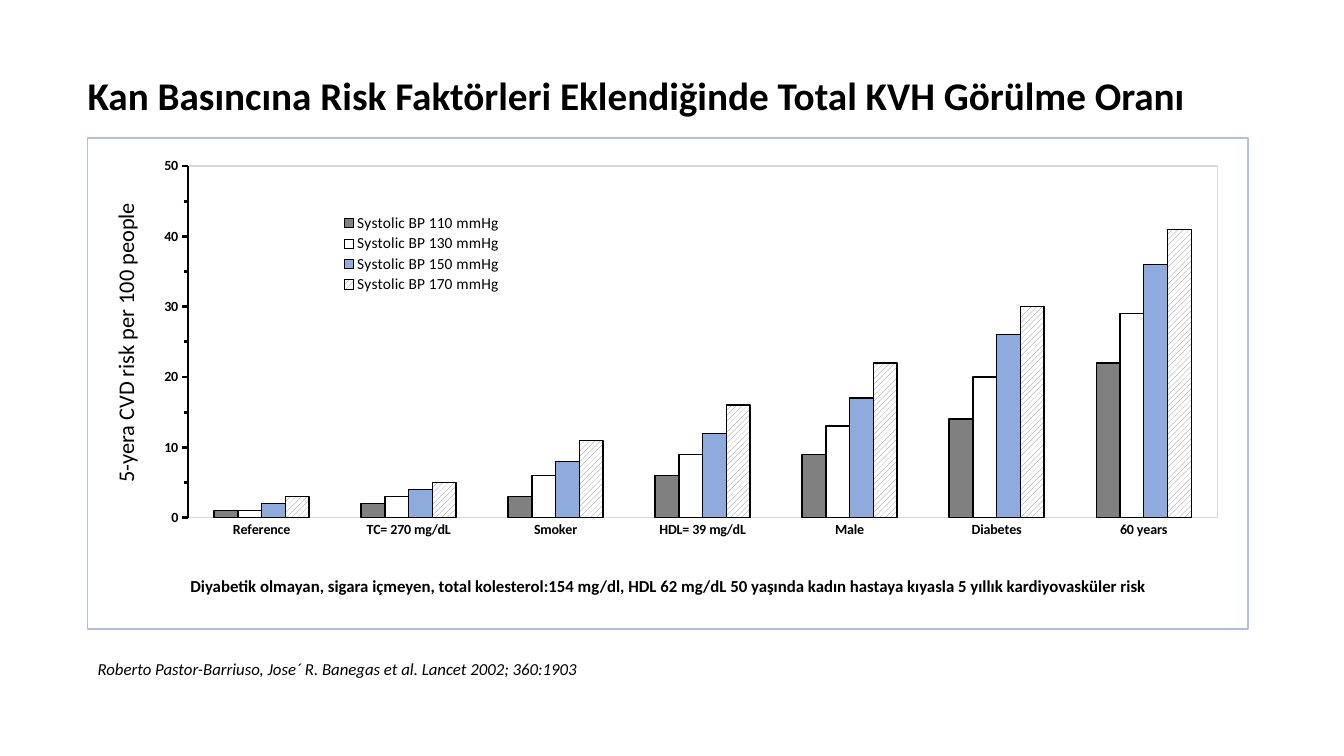
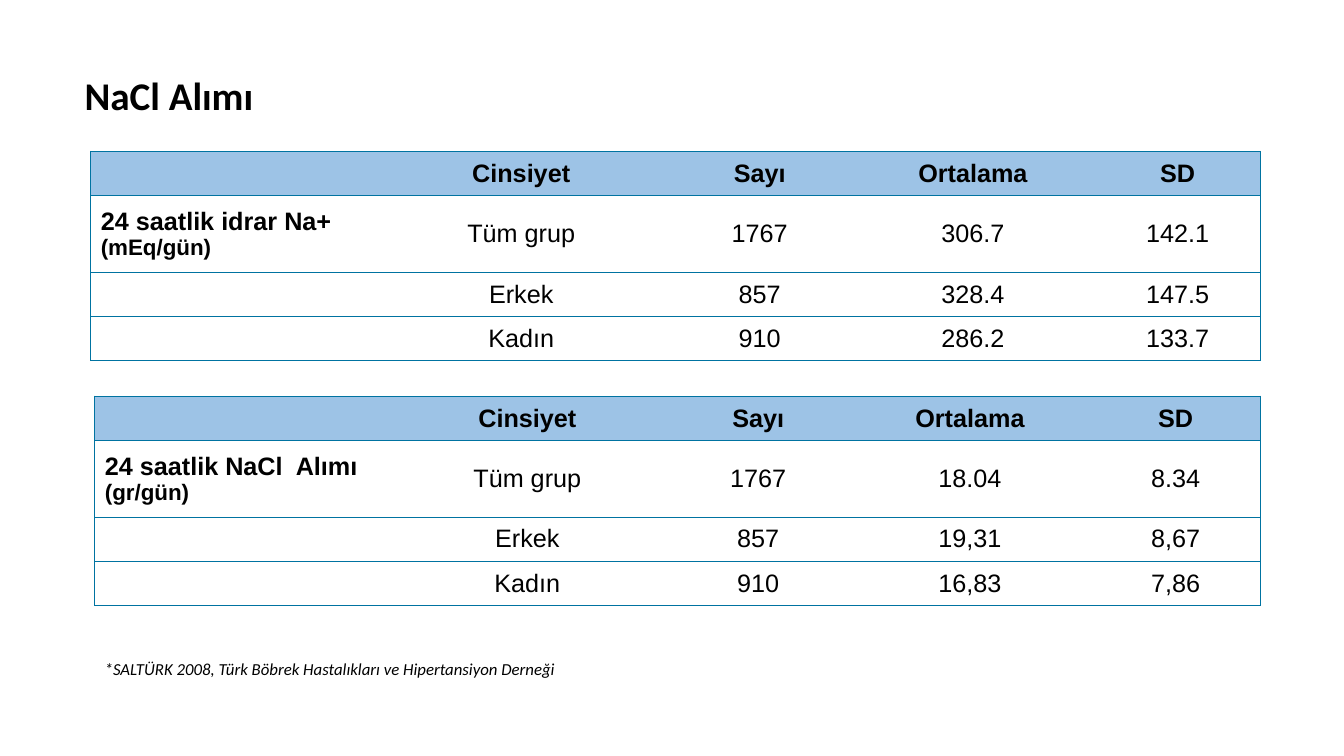
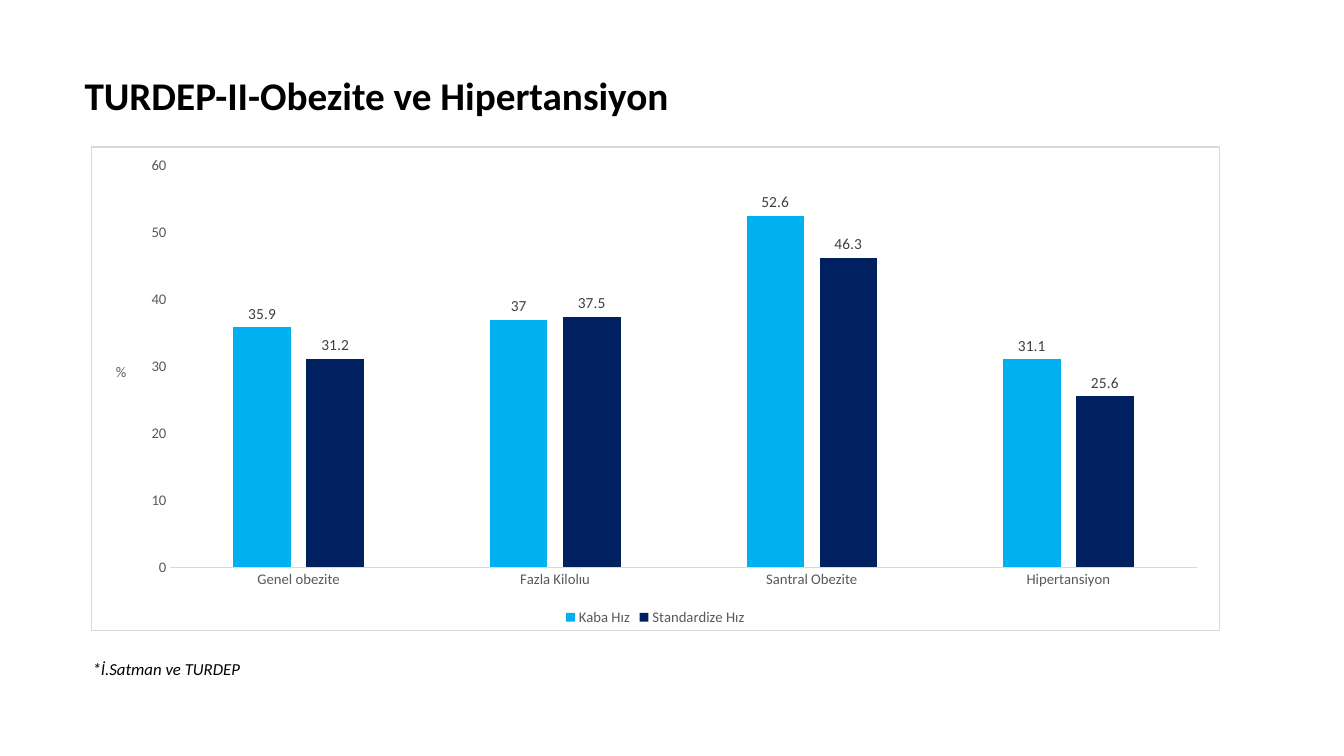
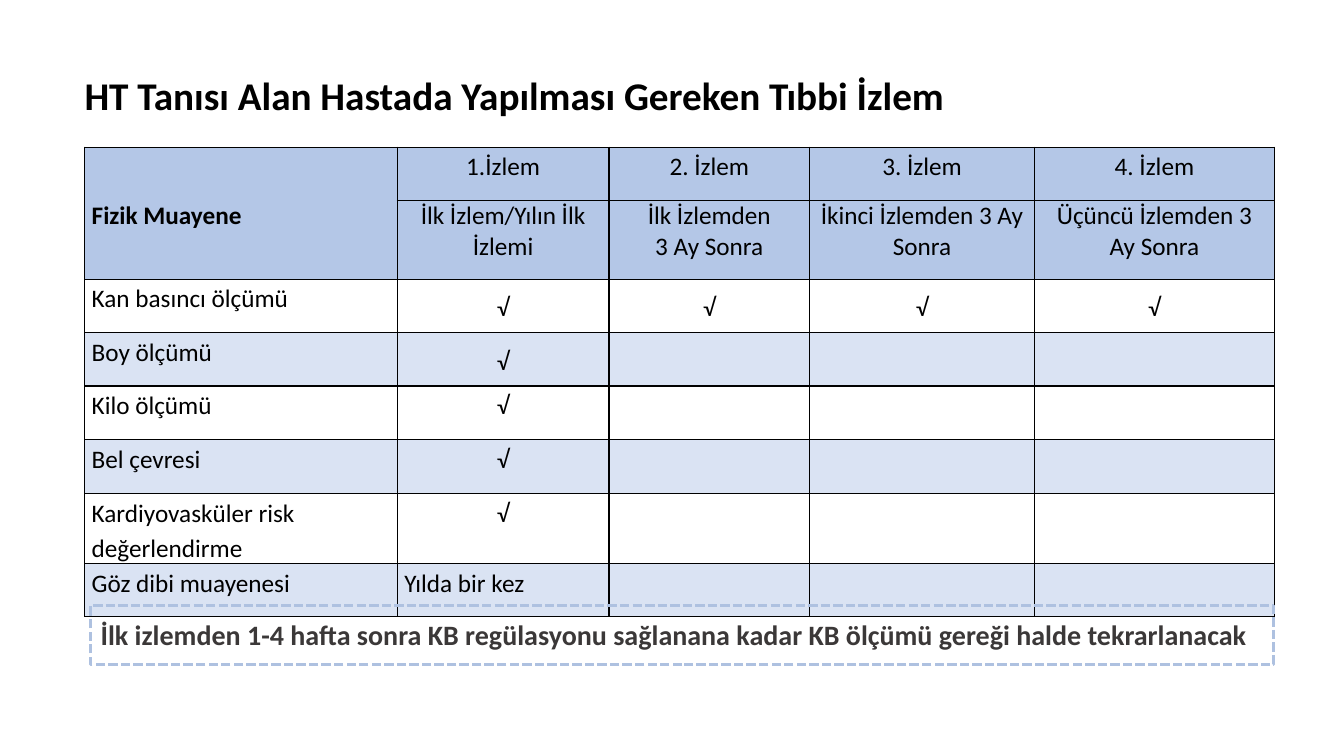
from pptx import Presentation
from pptx import util as u
from pptx.chart import data
from pptx.dml import color as dml
from pptx.enum import chart as ch, dml as line_kinds, shapes, text
from pptx.oxml import ns, parse_xml

PX = 9144  # 100 px to the inch
COLORS = {
    "black": "000000", "white": "FFFFFF", "dark": "3B3838",
    "label": "404040", "axis": "595959", "rule": "D9D9D9", "frame": "AEC1E0",
    "gray": "808080", "blue": "8FAADC", "sky": "00B0F0", "navy": "002060",
    "salt_head": "9DC3E6", "salt_line": "0073A1",
    "exam_head": "B4C7E7", "exam_band": "DAE3F3",
}
CENTER = text.PP_ALIGN.CENTER
TOP, MIDDLE = text.MSO_ANCHOR.TOP, text.MSO_ANCHOR.MIDDLE
TICK = ch.XL_TICK_MARK


def rgb(name):
    return dml.RGBColor.from_string(COLORS[name])


def assign(target, **fmt):
    for key, value in fmt.items():
        setattr(target, key, value)


def line_xml(tag, color, pt):
    """A line element of the given tag; without a colour it is not drawn."""
    paint = (f'<a:solidFill><a:srgbClr val="{COLORS[color]}"/></a:solidFill>'
             if color else "<a:noFill/>")
    return f'<a:{tag} {ns.nsdecls("a")} w="{u.Pt(pt)}">{paint}</a:{tag}>'


def frame_xml(color):
    """Shape properties of a chart part: white, with a thin outline or none."""
    return parse_xml(
        f'<c:spPr {ns.nsdecls("c", "a")}><a:solidFill><a:srgbClr val="FFFFFF"/>'
        f'</a:solidFill>{line_xml("ln", color, 1)}</c:spPr>')


def layout_xml(x, y, w, h, inner=False):
    target = '<c:layoutTarget val="inner"/>' if inner else ""
    sizes = "".join(f'<c:{k} val="{v}"/>' for k, v in zip("xywh", (x, y, w, h)))
    return parse_xml(
        f'<c:layout {ns.nsdecls("c")}><c:manualLayout>{target}'
        f'<c:xMode val="edge"/><c:yMode val="edge"/>{sizes}'
        '</c:manualLayout></c:layout>')


def set_layout(part, layout, after=None):
    """Replace the layout of a chart part, placing it after the named child."""
    for old in part.findall(ns.qn("c:layout")):
        part.remove(old)
    if after:
        part.find(ns.qn(after)).addnext(layout)
    else:
        part.insert(0, layout)


class Deck:
    def __init__(self):
        self.prs = Presentation()
        self.prs.slide_width, self.prs.slide_height = 1333 * PX, 750 * PX
        self.s = None

    def slide(self, title, x=74, w=1000):
        self.s = self.prs.slides.add_slide(self.prs.slide_layouts[6])
        self.text(title, x, 66, w, 57, size=28, bold=True)

    def font(self, font, size, color="black", name="Calibri", **fmt):
        assign(font, size=u.Pt(size), name=name, **fmt)
        font.color.rgb = rgb(color)

    def fill_text(self, tf, content, size, align=None, spacing=None, **fmt):
        """Set the lines of a string, or a tuple of (text, size) runs."""
        paragraphs = ([[(t, size)] for t in content.split("\n")]
                      if isinstance(content, str) else [content])
        for i, runs in enumerate(paragraphs):
            p = tf.add_paragraph() if i else tf.paragraphs[0]
            assign(p, alignment=align, line_spacing=spacing)
            for words, run_size in runs:
                if words:
                    r = p.add_run()
                    r.text = words
                    self.font(r.font, run_size, **fmt)

    def text(self, content, x, y, w, h, vert=None, **fmt):
        sp = self.s.shapes.add_textbox(*(v * PX for v in (x, y, w, h)))
        tf = sp.text_frame
        tf.word_wrap = True
        if vert:
            tf._txBody.bodyPr.set("vert", vert)
        self.fill_text(tf, content, **fmt)

    def source(self, content, x, w):
        self.text(content, x, 649, w, 30, size=12, italic=True)

    def box(self, x, y, w, h, fill=None, pt=1, dash=None):
        sp = self.s.shapes.add_shape(shapes.MSO_SHAPE.RECTANGLE,
                                     *(v * PX for v in (x, y, w, h)))
        sp.shadow.inherit = False
        if fill:
            sp.fill.solid()
            sp.fill.fore_color.rgb = rgb(fill)
        else:
            sp.fill.background()
        sp.line.color.rgb = rgb("frame")
        assign(sp.line, width=u.Pt(pt), dash_style=dash)
        return sp

    def table(self, x, y, cols, rows):
        frame = self.s.shapes.add_table(len(rows), len(cols), x * PX, y * PX,
                                        sum(cols) * PX, sum(rows) * PX)
        table = frame.table
        assign(table, first_row=False, horz_banding=False)
        for col, w in zip(table.columns, cols):
            col.width = w * PX
        for row, h in zip(table.rows, rows):
            row.height = h * PX
        return table

    def cell(self, cell, content, fill, edges, line, pt, inset, anchor, **fmt):
        """Fill a cell; edges names the sides (of L, R, T, B) that are ruled."""
        side, top = (v * PX for v in inset)
        assign(cell, margin_left=side, margin_right=side, margin_top=top,
               margin_bottom=top, vertical_anchor=anchor)
        if fill:
            cell.fill.solid()
            cell.fill.fore_color.rgb = rgb(fill)
        else:
            cell.fill.background()
        tcPr = cell._tc.get_or_add_tcPr()
        for i, edge in enumerate("LRTB"):
            color = line if edge in edges else None
            tcPr.insert(i, parse_xml(line_xml("ln" + edge, color, pt)))
        self.fill_text(cell.text_frame, content, **fmt)

    def salt_table(self, x, y, cols, label, unit, values):
        rows = [["", "Cinsiyet", "Sayı", "Ortalama", "SD"],
                [((label + " ", 18), (unit, 16)), "Tüm grup", "1767", *values[0]],
                ["", "Erkek", "857", *values[1]],
                ["", "Kadın", "910", *values[2]]]
        table = self.table(x, y, cols, [44, 76, 44, 44])
        last = len(cols) - 1
        for i, row in enumerate(rows):
            for j, content in enumerate(row):
                edges = "TB" + ("L" if j == 0 else "R" if j == last else "")
                self.cell(table.cell(i, j), content, None if i else "salt_head",
                          edges, "salt_line", 0.75, (10, 5), MIDDLE, size=18,
                          name="Arial", bold=i == 0 or j == 0,
                          align=CENTER if j else None)

    def exam_table(self, x, y, cols, row_heights, rows):
        table = self.table(x, y, cols, row_heights)
        table.cell(0, 0).merge(table.cell(1, 0))
        for i, row in enumerate(rows):
            fill = "exam_head" if i < 2 else "exam_band" if i % 2 else None
            for j in range(len(cols)):
                content = row[j] if j < len(row) else ""
                corner = i == j == 0
                tick = content == "√"
                centered = tick or (i < 2 and j > 0)
                middle = corner or (tick and i in (2, 3))
                self.cell(table.cell(i, j), content, fill, "LRTB", "black", 1,
                          (7, 0), MIDDLE if middle else TOP, size=18,
                          bold=corner, align=CENTER if centered else None,
                          spacing=None if i == 1 else 1.15)

    def chart(self, x, y, w, h, cats, series, plot_at, size, color,
              overlap=0, border=None, plot_border=None):
        cd = data.CategoryChartData()
        cd.categories = cats
        for name, values in series:
            cd.add_series(name, values)
        chart = self.s.shapes.add_chart(ch.XL_CHART_TYPE.COLUMN_CLUSTERED,
                                        *(v * PX for v in (x, y, w, h)), cd).chart
        assign(chart, has_title=False, has_legend=True)
        self.font(chart.font, 10)
        assign(chart.plots[0], gap_width=219, overlap=overlap,
               vary_by_categories=False)
        assign(chart.legend, position=ch.XL_LEGEND_POSITION.BOTTOM,
               include_in_layout=False)
        for axis in (chart.category_axis, chart.value_axis):
            assign(axis, has_major_gridlines=False, major_tick_mark=TICK.NONE,
                   minor_tick_mark=TICK.NONE)
            self.font(axis.tick_labels.font, size, color)
        cat_line = chart.category_axis.format.line
        cat_line.color.rgb, cat_line.width = rgb("rule"), u.Pt(0.75)
        root = chart._chartSpace
        root.find(ns.qn("c:chart")).addnext(frame_xml(border))
        plot_area = root.find(".//" + ns.qn("c:plotArea"))
        set_layout(plot_area, layout_xml(*plot_at, inner=True))
        plot_area.append(frame_xml(plot_border))
        return chart

    def paint(self, series, fill):
        series.format.fill.solid()
        series.format.fill.fore_color.rgb = rgb(fill)
        series.invert_if_negative = False


def risk_slide(d):
    d.slide("Kan Basıncına Risk Faktörleri Eklendiğinde Total KVH Görülme Oranı",
            x=77, w=1149)
    d.box(87, 137, 1151, 487, fill="white")
    chart = d.chart(
        155, 151, 1053, 459,
        ["Reference", "TC= 270 mg/dL", "Smoker", "HDL= 39 mg/dL", "Male",
         "Diabetes", "60 years"],
        [("Systolic BP 110 mmHg", (1, 2, 3, 6, 9, 14, 22)),
         ("Systolic BP 130 mmHg", (1, 3, 6, 9, 13, 20, 29)),
         ("Systolic BP 150 mmHg", (2, 4, 8, 12, 17, 26, 36)),
         ("Systolic BP 170 mmHg", (3, 5, 11, 16, 22, 30, 41))],
        (0.03, 0.03, 0.97, 0.76), 10, "black", plot_border="rule")
    for series, fill in zip(chart.plots[0].series, ("gray", "white", "blue", None)):
        if fill:
            d.paint(series, fill)
        else:
            pattern = series.format.fill
            pattern.patterned()
            pattern.pattern = line_kinds.MSO_PATTERN.WIDE_UPWARD_DIAGONAL
            pattern.fore_color.rgb = rgb("gray")
            pattern.back_color.rgb = rgb("white")
        series.format.line.color.rgb = rgb("black")
        series.format.line.width = u.Pt(1)
    axis = chart.value_axis
    assign(axis, minimum_scale=0, maximum_scale=50, major_unit=10, minor_unit=5,
           major_tick_mark=TICK.OUTSIDE, minor_tick_mark=TICK.OUTSIDE)
    axis.format.line.color.rgb = rgb("black")
    axis.format.line.width = u.Pt(2)
    for ax in (axis, chart.category_axis):
        ax.tick_labels.font.bold = True
    d.font(chart.legend.font, 11)
    set_layout(chart.legend._element, layout_xml(0.17, 0.13, 0.16, 0.18),
               after="c:legendPos")
    d.text("5-yera CVD risk per 100 people", 106, 168, 47, 344, vert="vert270",
           size=16, align=CENTER)
    d.text("Diyabetik olmayan, sigara içmeyen, total kolesterol:154 mg/dl, "
           "HDL 62 mg/dL 50 yaşında kadın hastaya kıyasla 5 yıllık "
           "kardiyovasküler risk", 179, 566, 1036, 30, size=12, bold=True)
    d.source("Roberto Pastor-Barriuso, Jose´ R. Banegas et al. "
             "Lancet 2002; 360:1903", 87, 667)


def salt_slide(d):
    d.slide("NaCl Alımı")
    d.salt_table(90, 150, [281, 292, 181, 242, 164], "24 saatlik idrar Na+",
                 "(mEq/gün)",
                 [("306.7", "142.1"), ("328.4", "147.5"), ("286.2", "133.7")])
    d.salt_table(94, 393, [290, 278, 180, 240, 168], "24 saatlik NaCl  Alımı",
                 "(gr/gün)",
                 [("18.04", "8.34"), ("19,31", "8,67"), ("16,83", "7,86")])
    d.source("*SALTÜRK 2008, Türk Böbrek Hastalıkları ve Hipertansiyon Derneği",
             94, 947)


def obesity_slide(d):
    d.slide("TURDEP-II-Obezite ve Hipertansiyon")
    chart = d.chart(
        90, 145, 1120, 481,
        ["Genel obezite", "Fazla Kilolıu", "Santral Obezite", "Hipertansiyon"],
        [("Kaba Hız", (35.9, 37, 52.6, 31.1)),
         ("Standardize Hız", (31.2, 37.5, 46.3, 25.6))],
        (0.07, 0.04, 0.91, 0.83), 10.5, "axis", overlap=-27, border="rule")
    for series, fill in zip(chart.plots[0].series, ("sky", "navy")):
        d.paint(series, fill)
        labels = series.data_labels
        assign(labels, show_value=True,
               position=ch.XL_LABEL_POSITION.OUTSIDE_END)
        d.font(labels.font, 11, "label")
    axis = chart.value_axis
    assign(axis, minimum_scale=0, maximum_scale=60, major_unit=10)
    axis.format.line.fill.background()
    tf = axis.axis_title.text_frame
    tf._txBody.bodyPr.set("rot", "0")
    d.fill_text(tf, "%", 10.5, color="axis", bold=False)
    d.font(chart.legend.font, 10.5, "axis")
    d.source("*İ.Satman ve TURDEP", 82, 272)


def follow_up_slide(d):
    d.slide("HT Tanısı Alan Hastada Yapılması Gereken Tıbbi İzlem")
    d.exam_table(
        84, 146, [310, 210, 199, 223, 238], [53, 78, 53, 53, 53, 54, 69, 53],
        [["Fizik Muayene", "1.İzlem", "2. İzlem", "3. İzlem", "4. İzlem"],
         ["", "İlk İzlem/Yılın İlk İzlemi", "İlk İzlemden\n3 Ay Sonra",
          "İkinci İzlemden 3 Ay Sonra", "Üçüncü İzlemden 3 Ay Sonra"],
         ["Kan basıncı ölçümü", "√", "√", "√", "√"],
         ["Boy ölçümü", "√"],
         ["Kilo ölçümü", "√"],
         ["Bel çevresi", "√"],
         ["Kardiyovasküler risk değerlendirme", "√"],
         ["Göz dibi muayenesi", "Yılda bir kez"]])
    sp = d.box(90, 601, 1173, 58, pt=2.25,
               dash=line_kinds.MSO_LINE.SQUARE_DOT)
    assign(sp.text_frame, word_wrap=True, vertical_anchor=TOP,
           margin_top=12 * PX, margin_bottom=12 * PX)
    d.fill_text(sp.text_frame, "İlk izlemden 1-4 hafta sonra KB regülasyonu "
                "sağlanana kadar KB ölçümü gereği halde tekrarlanacak", 20,
                align=text.PP_ALIGN.LEFT, color="dark", bold=True)


def main():
    deck = Deck()
    for build in (risk_slide, salt_slide, obesity_slide, follow_up_slide):
        build(deck)
    deck.prs.save("out.pptx")


if __name__ == "__main__":
    main()
